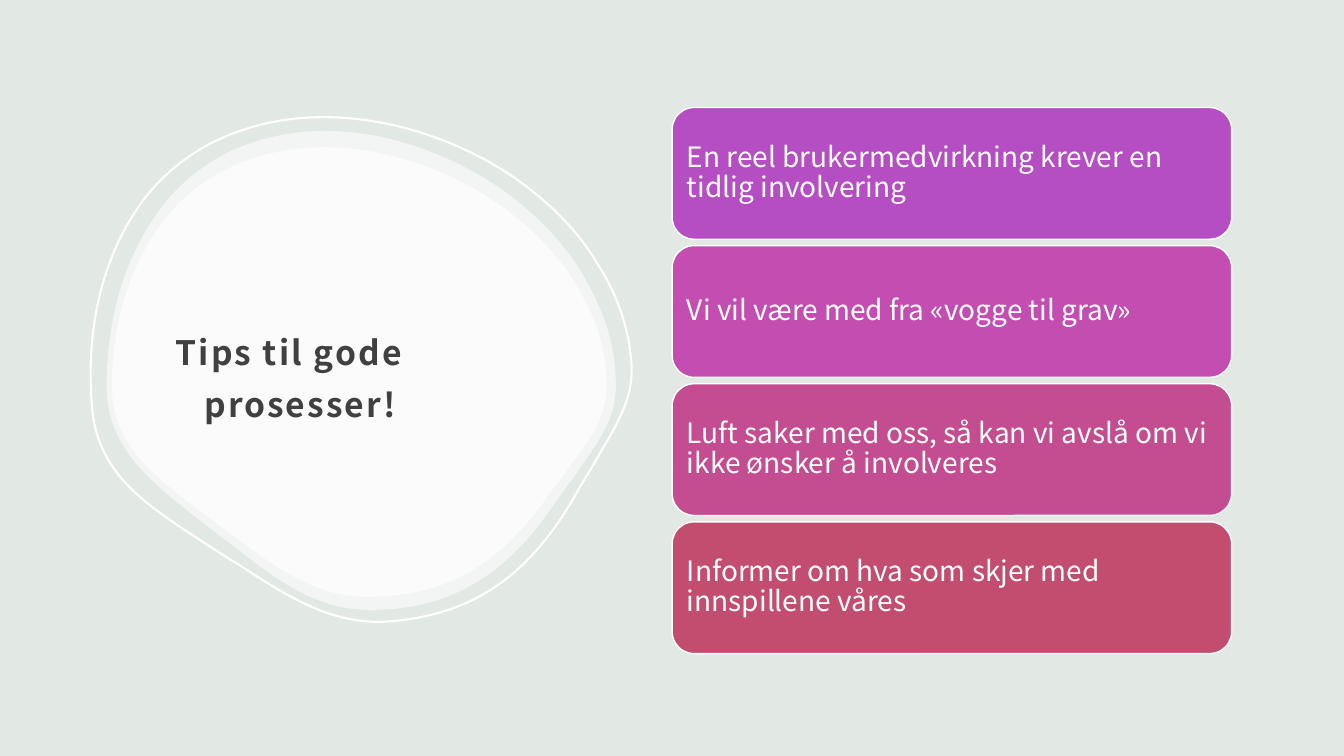
from dataclasses import dataclass
from typing import Any, Optional

from lxml import etree
from pptx import Presentation
from pptx.dml.color import RGBColor
from pptx.enum.shapes import MSO_SHAPE
from pptx.enum.text import MSO_ANCHOR, PP_ALIGN
from pptx.oxml.ns import qn
from pptx.util import Cm, Pt

ROUNDED = MSO_SHAPE.ROUNDED_RECTANGLE
MIDDLE = MSO_ANCHOR.MIDDLE
LEFT = PP_ALIGN.LEFT

SAGE = RGBColor(0xE2, 0xE8, 0xE4)
WHITE = RGBColor(0xFF, 0xFF, 0xFF)
CHARCOAL = RGBColor(0x40, 0x40, 0x40)
VIOLET = RGBColor(0xB5, 0x4D, 0xC3)
ORCHID = RGBColor(0xC3, 0x4D, 0xB0)
MAGENTA = RGBColor(0xC3, 0x4D, 0x90)
ROSE = RGBColor(0xC3, 0x4D, 0x6F)

FONT_NAME = "Noto Sans CJK JP"
TITLE_FONT = {"name": FONT_NAME, "size": Pt(24), "bold": True}
TIP_FONT = {"name": FONT_NAME, "size": Pt(20), "bold": False}

Point = tuple[float, float]

PEBBLE_START: Point = (42.8, 0)
PEBBLE_CURVES: list[tuple[Point, Point, Point]] = [
    ((36.2, 0), (30.1, 1.5), (24.8, 4)),
    ((19.8, 6.5), (15.2, 10.1), (11.7, 14.7)),
    ((4.2, 24.4), (0, 37.9), (0, 53.1)),
    ((0, 58.9), (1.6, 63.8), (5.1, 68.6)),
    ((8.9, 73.7), (14.7, 78.3), (20.6, 83.2)),
    ((21.6, 84), (22.8, 85.1), (24, 85.9)),
    ((34.1, 94.5), (41.6, 100), (51.7, 100)),
    ((67.1, 100), (78.2, 93.3), (88.3, 77.3)),
    ((89.7, 75.2), (91.1, 73.3), (92.3, 71.4)),
    ((97.4, 63.8), (100, 59.8), (100, 53.1)),
    ((100, 46.3), (98.4, 39.6), (95.2, 33.3)),
    ((92.3, 26.9), (87.9, 21.3), (82.4, 16.2)),
    ((77, 11.2), (70.5, 7.2), (63.8, 4.4)),
    ((56.8, 1.5), (49.7, 0), PEBBLE_START),
]


@dataclass(frozen=True)
class Pebble:
    left: float
    top: float
    width: float
    height: float
    opacity: Optional[int] = None
    rotation: float = 0


@dataclass(frozen=True)
class Tip:
    text: str
    color: RGBColor


PEBBLES = [
    Pebble(2.69, 3.3, 12.83, 12.07, opacity=60),
    Pebble(2.82, 3.71, 12.47, 11.33, opacity=60),
    Pebble(2.26, 2.87, 13.64, 12.83, rotation=355),
]
TITLE_LINES = ["Tips til gode", "prosesser!"]
TITLE_INDENT, TITLE_HANGING = 2.92, 0.72
TIPS = [
    Tip("En reel brukermedvirkning krever en tidlig involvering", VIOLET),
    Tip("Vi vil være med fra «vogge til grav»", ORCHID),
    Tip("Luft saker med oss, så kan vi avslå om vi ikke ønsker å involveres", MAGENTA),
    Tip("Informer om hva som skjer med innspillene våres", ROSE),
]
TIPS_LEFT, TIPS_TOP = 16.94, 2.71
TIP_WIDTH, TIP_HEIGHT, TIP_PITCH = 14.1, 3.32, 3.48


def round_outline(shape: Any, pebble: Pebble) -> None:
    segments = list(shape._element.iter(qn("a:lnTo")))
    for segment, curve in zip(segments, PEBBLE_CURVES):
        bend = etree.Element(qn("a:cubicBezTo"))
        for x, y in curve:
            etree.SubElement(
                bend,
                qn("a:pt"),
                x=str(Cm(pebble.width * x / 100)),
                y=str(Cm(pebble.height * y / 100)),
            )
        segment.getparent().replace(segment, bend)


def draw_pebble(slide: Any, pebble: Pebble) -> None:
    nodes = [
        (Cm(pebble.left + pebble.width * x / 100), Cm(pebble.top + pebble.height * y / 100))
        for x, y in [PEBBLE_START] + [curve[-1] for curve in PEBBLE_CURVES]
    ]
    builder = slide.shapes.build_freeform(*nodes[0])
    builder.add_line_segments(nodes[1:], close=True)
    shape = builder.convert_to_shape()
    round_outline(shape, pebble)
    shape.shadow.inherit = False
    shape.rotation = pebble.rotation
    if pebble.opacity is None:
        shape.fill.background()
        shape.line.color.rgb = WHITE
        shape.line.width = Pt(1.5)
    else:
        shape.fill.solid()
        shape.fill.fore_color.rgb = WHITE
        shape.line.fill.background()
        color = shape.fill._xPr.find(f".//{qn('a:srgbClr')}")
        etree.SubElement(color, qn("a:alpha"), val=str(pebble.opacity * 1000))


def set_frame(frame: Any, inset: float) -> None:
    values = {
        "word_wrap": True,
        "vertical_anchor": MIDDLE,
        "margin_left": Cm(inset),
        "margin_right": Cm(inset),
        "margin_top": Cm(inset),
        "margin_bottom": Cm(inset),
    }
    for name, value in values.items():
        setattr(frame, name, value)


def write_run(paragraph: Any, text: str, font: dict[str, Any], color: RGBColor) -> Any:
    paragraph.alignment = LEFT
    run = paragraph.add_run()
    run.text = text
    for name, value in font.items():
        setattr(run.font, name, value)
    run.font.color.rgb = color
    return run


def draw_title(slide: Any) -> None:
    title = slide.shapes.add_textbox(Cm(1.93), Cm(5.3), Cm(12.37), Cm(8.15))
    set_frame(title.text_frame, 0.3)
    paragraph = title.text_frame.paragraphs[0]
    paragraph.line_spacing = 1.3
    for index, line in enumerate(TITLE_LINES):
        if index:
            paragraph.add_line_break()
        run = write_run(paragraph, line, TITLE_FONT, CHARCOAL)
        run.font._element.set("spc", "150")
    properties = paragraph._p.get_or_add_pPr()
    properties.set("marL", str(Cm(TITLE_INDENT)))
    properties.set("indent", str(-Cm(TITLE_HANGING)))


def draw_tip(slide: Any, tip: Tip, top: float) -> None:
    card = slide.shapes.add_shape(
        ROUNDED, Cm(TIPS_LEFT), Cm(top), Cm(TIP_WIDTH), Cm(TIP_HEIGHT)
    )
    card.shadow.inherit = False
    card.fill.solid()
    card.fill.fore_color.rgb = tip.color
    card.line.color.rgb = WHITE
    card.line.width = Pt(1)
    set_frame(card.text_frame, 0.21)
    paragraph = card.text_frame.paragraphs[0]
    paragraph.line_spacing = 0.9
    write_run(paragraph, tip.text, TIP_FONT, WHITE)


def main() -> None:
    presentation = Presentation()
    presentation.slide_width = Cm(33.87)
    presentation.slide_height = Cm(19.05)
    slide = presentation.slides.add_slide(presentation.slide_layouts[6])
    slide.background.fill.solid()
    slide.background.fill.fore_color.rgb = SAGE
    for pebble in PEBBLES:
        draw_pebble(slide, pebble)
    draw_title(slide)
    for index, tip in enumerate(TIPS):
        draw_tip(slide, tip, TIPS_TOP + index * TIP_PITCH)
    presentation.save("out.pptx")


if __name__ == "__main__":
    main()
